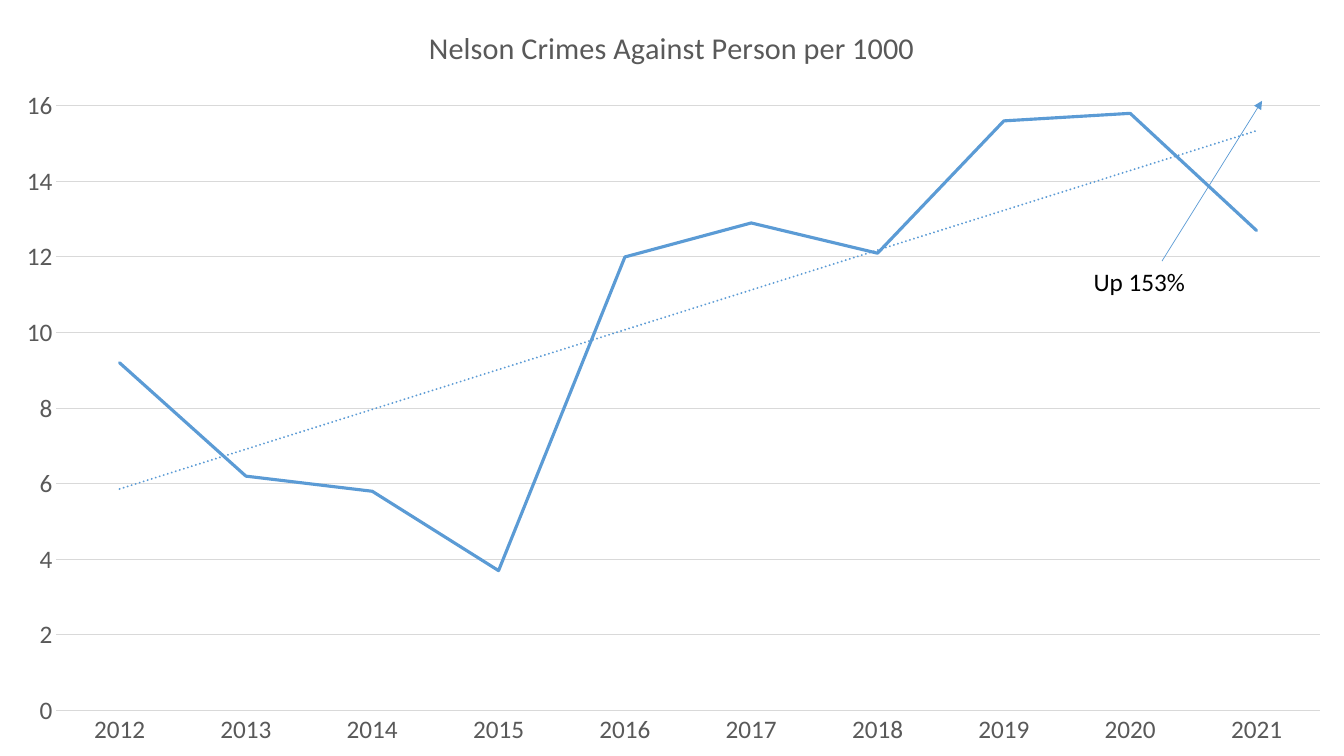
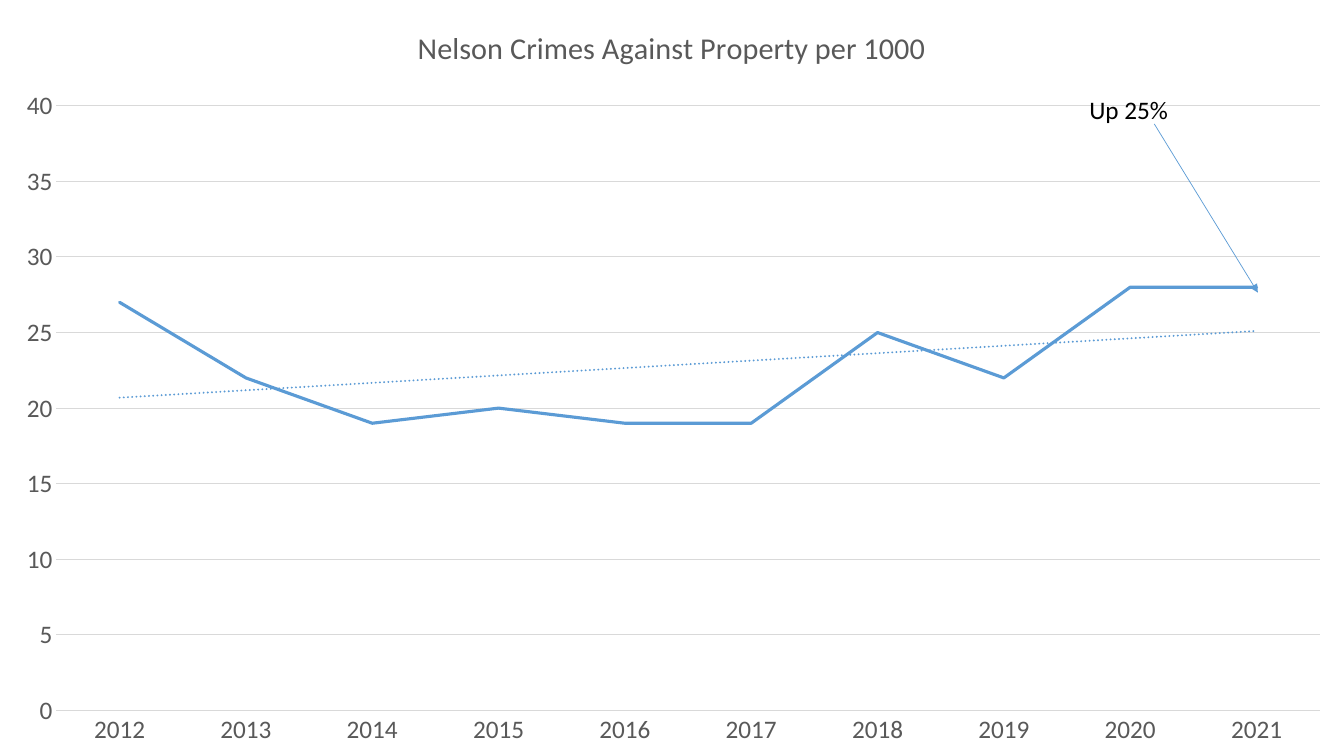
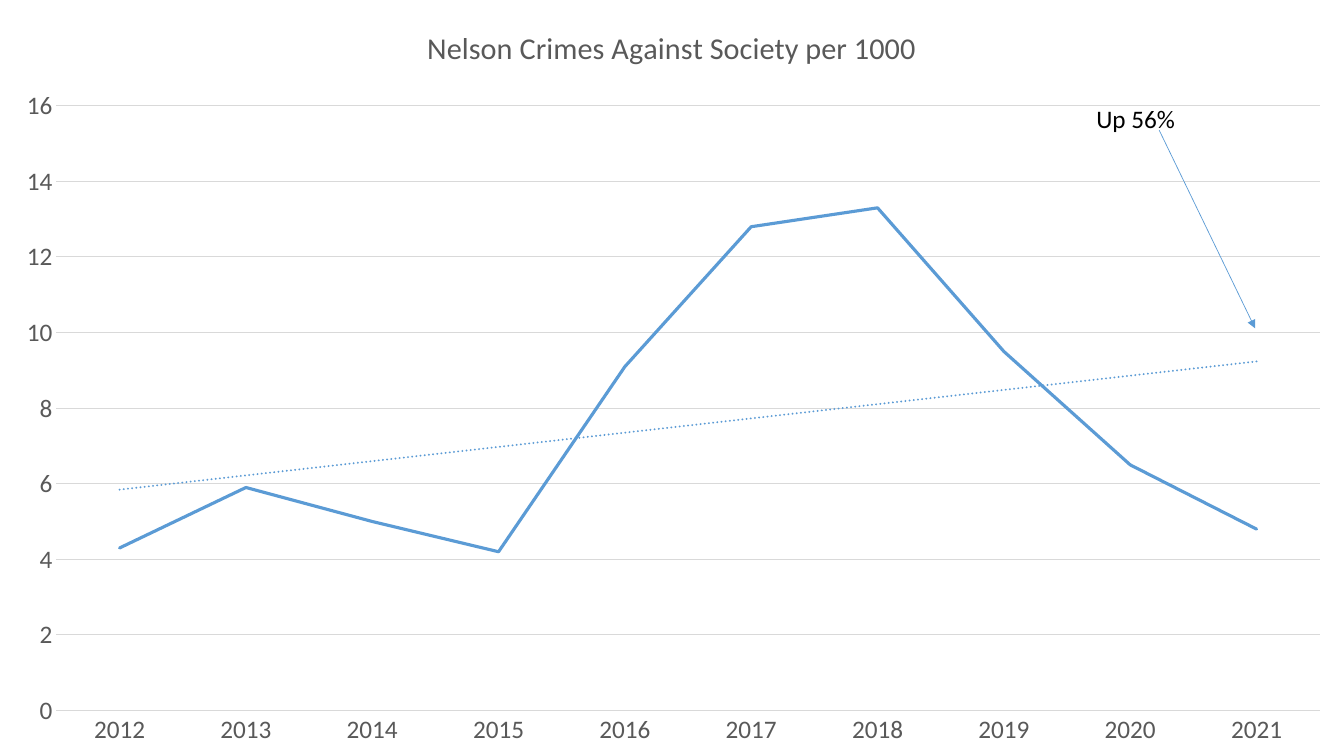
import pptx
import pptx.util
import pptx.chart.data
import pptx.dml.color
import pptx.enum.chart
import pptx.enum.dml
import pptx.enum.shapes
import pptx.enum.text
import pptx.oxml
import pptx.oxml.ns

Pt = pptx.util.Pt
HUES = {"line": "5B9BD5", "grid": "D9D9D9", "grey": "595959", "text": "000000"}
FONT = "Calibri"
WIDE, HIGH = 960, 540
YEARS = [str(year) for year in range(2012, 2022)]
PLOT = {"x": 0.042, "y": 0.14, "w": 0.94, "h": 0.8}

TREND = """<c:trendline %s><c:spPr><a:ln w="%d" cap="rnd">
<a:solidFill><a:srgbClr val="%s"/></a:solidFill><a:prstDash val="sysDot"/>
</a:ln></c:spPr><c:trendlineType val="linear"/>
<c:dispRSqr val="0"/><c:dispEq val="0"/></c:trendline>"""

LAYOUT = """<c:layout %s><c:manualLayout><c:layoutTarget val="inner"/>
<c:xMode val="edge"/><c:yMode val="edge"/><c:x val="%s"/><c:y val="%s"/>
<c:w val="%s"/><c:h val="%s"/></c:manualLayout></c:layout>"""


def hue(name):
    return pptx.dml.color.RGBColor.from_string(HUES[name])


class Deck:
    def __init__(self):
        self.file = pptx.Presentation()
        self.file.slide_width = Pt(WIDE)
        self.file.slide_height = Pt(HIGH)
        self.slide = None

    def page(self):
        self.slide = self.file.slides.add_slide(self.file.slide_layouts[6])

    def font(self, font, size, name):
        font.name = FONT
        font.size = Pt(size)
        font.bold = False
        font.color.rgb = hue(name)

    def stroke(self, line, name, width):
        line.color.rgb = hue(name)
        line.width = Pt(width)

    def chart(self, title, rates, top, step, form):
        data = pptx.chart.data.CategoryChartData(number_format=form)
        data.categories = YEARS
        data.add_series(title, rates)
        chart = self.slide.shapes.add_chart(
            pptx.enum.chart.XL_CHART_TYPE.LINE,
            0, 0, Pt(WIDE), Pt(HIGH), data).chart
        self.font(chart.font, 18, "text")
        chart.has_legend = False
        chart.has_title = True
        run = chart.chart_title.text_frame.paragraphs[0].add_run()
        run.text = title
        self.font(run.font, 21.6, "grey")
        self.axes(chart, top, step, form)
        self.series(chart.plots[0])
        self.frame(chart)

    def axes(self, chart, top, step, form):
        none = pptx.enum.chart.XL_TICK_MARK.NONE
        years, rates = chart.category_axis, chart.value_axis
        for axis in (years, rates):
            axis.major_tick_mark = none
            axis.minor_tick_mark = none
            self.font(axis.tick_labels.font, 18, "grey")
        self.stroke(years.format.line, "grid", 0.75)
        rates.format.line.fill.background()
        rates.has_major_gridlines = True
        self.stroke(rates.major_gridlines.format.line, "grid", 0.75)
        rates.minimum_scale = 0
        rates.maximum_scale = top
        rates.major_unit = step
        rates.tick_labels.number_format = form
        rates.tick_labels.number_format_is_linked = False

    def series(self, plot):
        plot.vary_by_categories = False
        series = plot.series[0]
        series.smooth = False
        series.marker.style = pptx.enum.chart.XL_MARKER_STYLE.NONE
        self.stroke(series.format.line, "line", 2.25)
        series.format.line._ln.set("cap", "rnd")
        trend = pptx.oxml.parse_xml(
            TREND % (pptx.oxml.ns.nsdecls("c", "a"), Pt(1.5), HUES["line"]))
        series._element.find(pptx.oxml.ns.qn("c:cat")).addprevious(trend)

    def frame(self, chart):
        area = chart._chartSpace.chart.plotArea
        for old in area.findall(pptx.oxml.ns.qn("c:layout")):
            area.remove(old)
        area.insert(0, pptx.oxml.parse_xml(
            LAYOUT % (pptx.oxml.ns.nsdecls("c"), *PLOT.values())))

    def note(self, text, left, top, width):
        box = self.slide.shapes.add_textbox(Pt(left), Pt(top), Pt(width), Pt(29))
        frame = box.text_frame
        frame.word_wrap = False
        frame.auto_size = pptx.enum.text.MSO_AUTO_SIZE.SHAPE_TO_FIT_TEXT
        run = frame.paragraphs[0].add_run()
        run.text = text
        self.font(run.font, 18, "text")

    def arrow(self, *ends):
        link = self.slide.shapes.add_connector(
            pptx.enum.shapes.MSO_CONNECTOR.STRAIGHT, *map(Pt, ends))
        self.stroke(link.line, "line", 0.5)
        head = pptx.oxml.parse_xml(
            '<a:tailEnd %s type="triangle"/>' % pptx.oxml.ns.nsdecls("a"))
        link.line._ln.append(head)
        link._element.spPr.append(pptx.oxml.parse_xml(
            "<a:effectLst %s/>" % pptx.oxml.ns.nsdecls("a")))


PAGES = [
    ("Person", [9.2, 6.2, 5.8, 3.7, 12, 12.9, 12.1, 15.6, 15.8, 12.7],
     16, 2, "General", ("Up 153%", 774, 186.5, 80.6), (830, 186.5, 901.5, 72)),
    ("Property", [27, 22, 19, 20, 19, 19, 25, 22, 28, 28],
     40, 5, "#,##0", ("Up 25%", 771, 64, 71.3), (824.5, 88.5, 898.5, 209)),
    ("Society", [4.3, 5.9, 5, 4.2, 9.1, 12.8, 13.3, 9.5, 6.5, 4.8],
     16, 2, "#,##0", ("Up 56%", 776, 70, 71.3), (828, 93, 896.5, 234.5)),
]


def main():
    deck = Deck()
    for kind, rates, top, step, form, note, ends in PAGES:
        deck.page()
        deck.chart(f"Nelson Crimes Against {kind} per 1000", rates, top, step, form)
        deck.note(*note)
        deck.arrow(*ends)
    deck.file.save("out.pptx")


if __name__ == "__main__":
    main()
